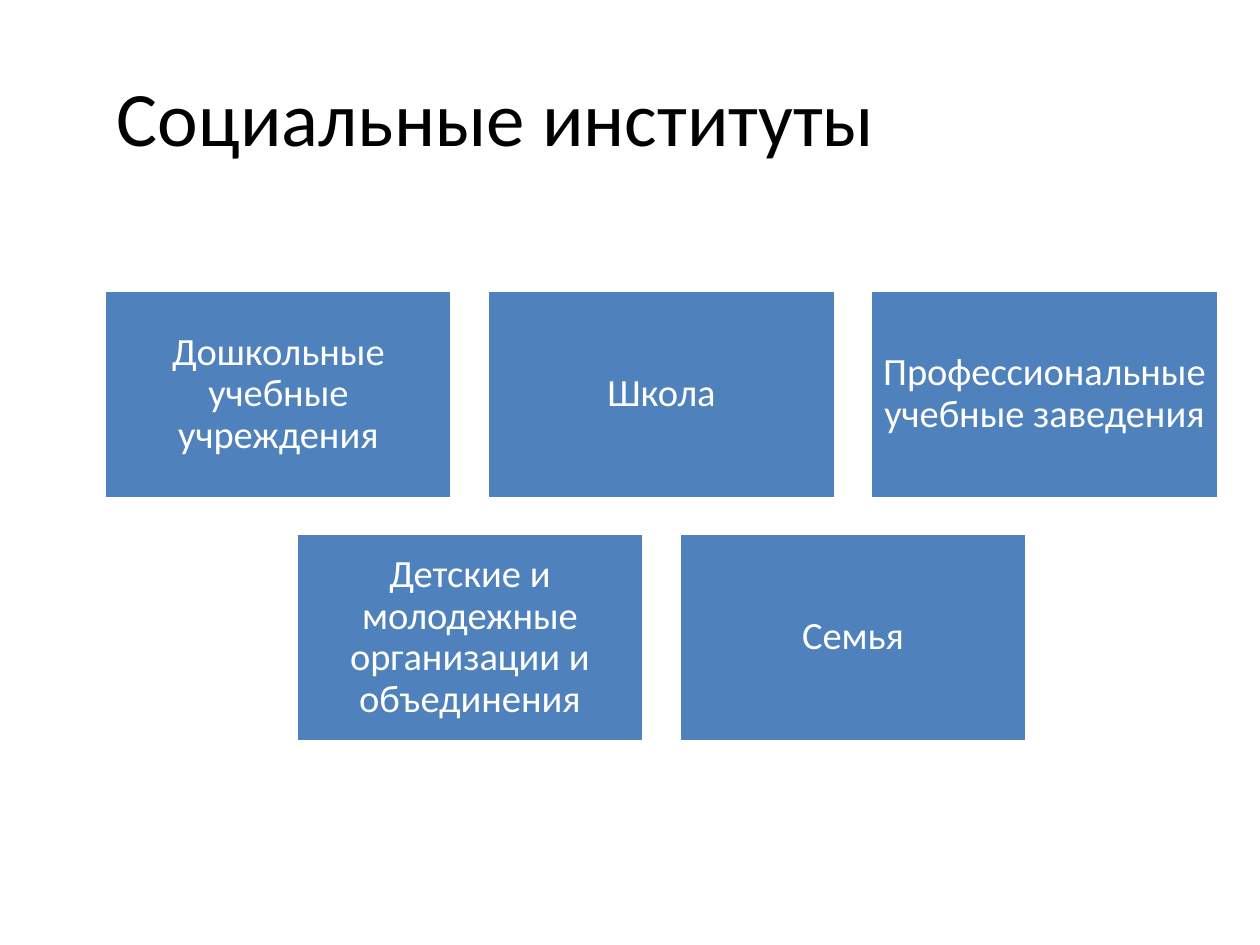
import pptx
import pptx.util
import pptx.dml.color
import pptx.enum.shapes
import pptx.enum.text

TITLE = "Социальные институты"
ROWS = [
    ["Дошкольные учебные учреждения", "Школа", "Профессиональные учебные заведения"],
    ["Детские и молодежные организации и объединения", "Семья"],
]
COLORS = {"title": "000000", "box": "4F81BD", "white": "FFFFFF"}
FONT = "Calibri"
SLIDE_W, SLIDE_H = 10, 7.5
LEFT, WIDTH = 0.83, 8.84
TOP, BOX_H = 2.3, 1.66
COLUMNS = 3
BOX_W = 2.76
GAP = (WIDTH - COLUMNS * BOX_W) / (COLUMNS - 1)
ROW_GAP = 0.27
INSET = 0.09

Inches = pptx.util.Inches
Pt = pptx.util.Pt
PP_ALIGN = pptx.enum.text.PP_ALIGN


def rgb(name):
    return pptx.dml.color.RGBColor.from_string(COLORS[name])


def write(sp, text, size, color, align):
    tf = sp.text_frame
    tf.word_wrap = True
    tf.vertical_anchor = pptx.enum.text.MSO_ANCHOR.MIDDLE
    tf.text = text
    p = tf.paragraphs[0]
    p.alignment = align
    font = p.runs[0].font
    font.name, font.size = FONT, Pt(size)
    font.color.rgb = rgb(color)
    return tf


def add_box(s, x, y, text):
    sp = s.shapes.add_shape(pptx.enum.shapes.MSO_SHAPE.RECTANGLE,
                            Inches(x), Inches(y), Inches(BOX_W), Inches(BOX_H))
    sp.shadow.inherit = False
    sp.fill.solid()
    sp.fill.fore_color.rgb = rgb("box")
    sp.line.color.rgb = rgb("white")
    sp.line.width = Pt(2)
    tf = write(sp, text, 22, "white", PP_ALIGN.CENTER)
    tf.margin_left = tf.margin_right = tf.margin_top = tf.margin_bottom = Inches(INSET)
    tf.paragraphs[0].line_spacing = 0.9


def main():
    prs = pptx.Presentation()
    prs.slide_width, prs.slide_height = Inches(SLIDE_W), Inches(SLIDE_H)
    s = prs.slides.add_slide(prs.slide_layouts[6])

    title = s.shapes.add_textbox(Inches(LEFT), Inches(0.29), Inches(WIDTH), Inches(1.25))
    write(title, TITLE, 44, "title", PP_ALIGN.LEFT)

    for i, row in enumerate(ROWS):
        row_w = len(row) * BOX_W + (len(row) - 1) * GAP
        x0 = LEFT + (WIDTH - row_w) / 2
        y = TOP + i * (BOX_H + ROW_GAP)
        for j, text in enumerate(row):
            add_box(s, x0 + j * (BOX_W + GAP), y, text)

    prs.save("out.pptx")


if __name__ == "__main__":
    main()
